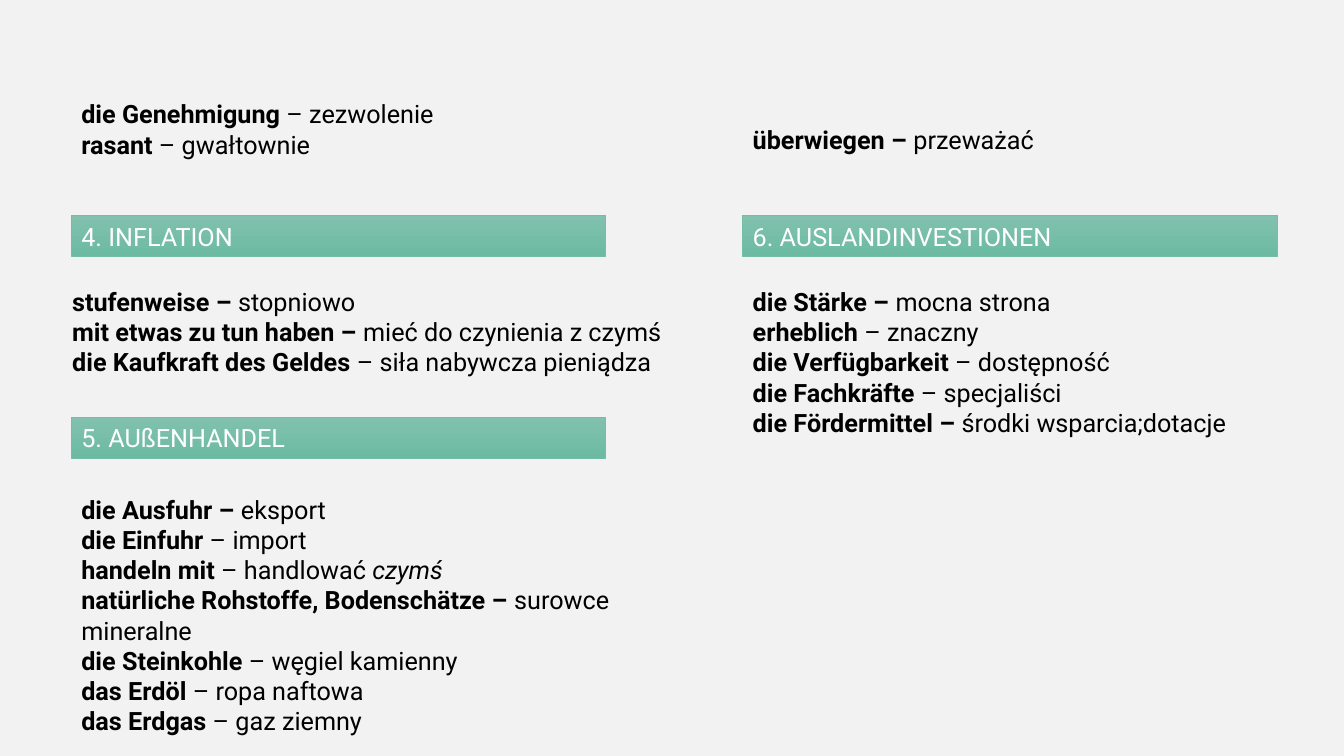
from pptx import Presentation
from pptx.dml.color import RGBColor
from pptx.enum.shapes import MSO_SHAPE
from pptx.enum.text import MSO_ANCHOR, PP_ALIGN
from pptx.util import Cm, Pt

BACKGROUND = RGBColor(0xF2, 0xF2, 0xF2)
BLACK = RGBColor(0, 0, 0)
WHITE = RGBColor(0xFF, 0xFF, 0xFF)
GREEN_LIGHT = RGBColor(0x81, 0xC1, 0xAD)
GREEN_DARK = RGBColor(0x6C, 0xBA, 0xA2)
GREEN_LINE = RGBColor(0x75, 0xBD, 0xA7)

LEFT, RIGHT = 1.8, 18.72
LIST_WIDTH = 15.14

# left, top, text
HEADINGS = [
    (LEFT, 5.44, "4. INFLATION"),
    (LEFT, 10.52, "5. AUßENHANDEL"),
    (RIGHT, 5.44, "6. AUSLANDINVESTIONEN"),
]

# left, top, width, height, entries of (bold term, translation, optional italic ending)
WORD_LISTS = [
    (LEFT, 2.36, LIST_WIDTH, 1.8, [
        ("die Genehmigung", " – zezwolenie"),
        ("rasant", " – gwałtownie"),
    ]),
    (1.57, 7.09, 16.94, 2.6, [
        ("stufenweise – ", "stopniowo"),
        ("mit etwas zu tun haben – ", "mieć do czynienia z czymś"),
        ("die Kaufkraft des Geldes ", "– siła nabywcza pieniądza"),
    ]),
    (LEFT, 12.32, LIST_WIDTH, 6.5, [
        ("die Ausfuhr – ", "eksport"),
        ("die Einfuhr", " – import"),
        ("handeln mit ", "– handlować ", "czymś"),
        ("natürliche Rohstoffe, Bodenschätze – ", "surowce mineralne"),
        ("die Steinkohle ", "– węgiel kamienny"),
        ("das Erdöl", " – ropa naftowa"),
        ("das Erdgas", " – gaz ziemny"),
    ]),
    (RIGHT, 3, LIST_WIDTH, 1.02, [
        ("überwiegen – ", "przeważać"),
    ]),
    (RIGHT, 7.09, LIST_WIDTH, 4.11, [
        ("die Stärke – ", "mocna strona"),
        ("erheblich", " – znaczny"),
        ("die Verfügbarkeit", " – dostępność"),
        ("die Fachkräfte ", "– specjaliści"),
        ("die Fördermittel – ", "środki wsparcia;dotacje"),
    ]),
]


class VocabularySlide:
    font = "Roboto"
    size = Pt(18)

    def __init__(self, prs):
        self.s = prs.slides.add_slide(prs.slide_layouts[6])
        fill = self.s.background.fill
        fill.solid()
        fill.fore_color.rgb = BACKGROUND

    def run(self, p, text, color, bold=False, italic=False):
        r = p.add_run()
        r.text = text
        r.font.name, r.font.size = self.font, self.size
        r.font.bold, r.font.italic = bold, italic
        r.font.color.rgb = color

    def heading(self, left, top, text):
        sp = self.s.shapes.add_shape(MSO_SHAPE.RECTANGLE, Cm(left), Cm(top), Cm(13.46), Cm(1.02))
        sp.shadow.inherit = False
        sp.fill.gradient()
        sp.fill.gradient_angle = 270
        for stop, color in zip(sp.fill.gradient_stops, (GREEN_LIGHT, GREEN_DARK)):
            stop.color.rgb = color
        first, last = sp.fill.gradient_stops
        first.position, last.position = 0, 1
        sp.line.color.rgb = GREEN_LINE
        sp.line.width = Pt(0.5)
        tf = sp.text_frame
        tf.word_wrap = True
        tf.vertical_anchor = MSO_ANCHOR.MIDDLE
        p = tf.paragraphs[0]
        p.alignment = PP_ALIGN.JUSTIFY
        self.run(p, text, WHITE)

    def word_list(self, left, top, width, height, entries):
        sp = self.s.shapes.add_textbox(Cm(left), Cm(top), Cm(width), Cm(height))
        tf = sp.text_frame
        tf.word_wrap = True
        for i, (term, translation, *endings) in enumerate(entries):
            p = tf.add_paragraph() if i else tf.paragraphs[0]
            self.run(p, term, BLACK, bold=True)
            self.run(p, translation, BLACK)
            for ending in endings:
                self.run(p, ending, BLACK, italic=True)


def main():
    prs = Presentation()
    prs.slide_width, prs.slide_height = Cm(33.87), Cm(19.05)
    slide = VocabularySlide(prs)
    for heading in HEADINGS:
        slide.heading(*heading)
    for word_list in WORD_LISTS:
        slide.word_list(*word_list)
    prs.save("out.pptx")


if __name__ == "__main__":
    main()
